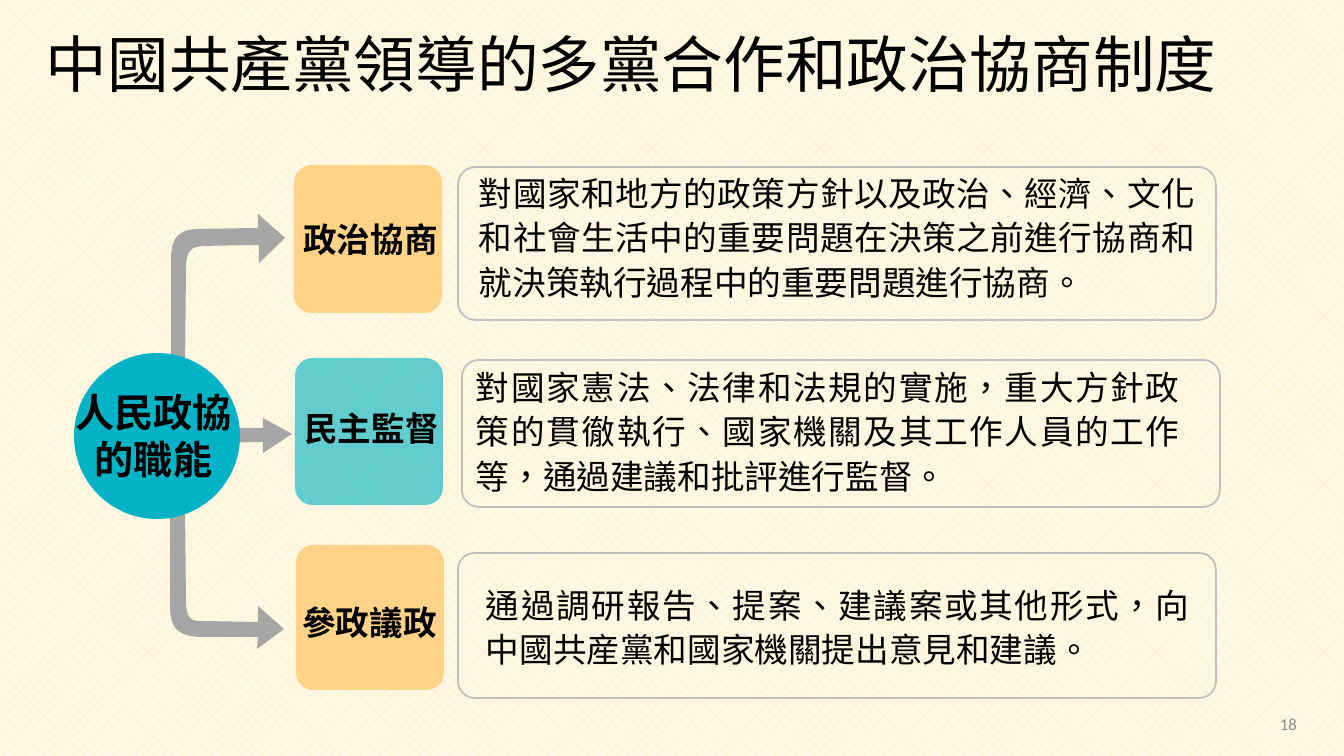
from lxml import etree
from pptx import Presentation
from pptx.dml.color import RGBColor
from pptx.enum.dml import MSO_PATTERN
from pptx.enum.lang import MSO_LANGUAGE_ID
from pptx.enum.shapes import MSO_SHAPE
from pptx.enum.text import MSO_ANCHOR, MSO_AUTO_SIZE, PP_ALIGN
from pptx.oxml.ns import qn
from pptx.util import Pt

RECT, ROUND, OVAL = MSO_SHAPE.RECTANGLE, MSO_SHAPE.ROUNDED_RECTANGLE, MSO_SHAPE.OVAL
LEFT, CENTER, RIGHT, JUSTIFY = PP_ALIGN.LEFT, PP_ALIGN.CENTER, PP_ALIGN.RIGHT, PP_ALIGN.JUSTIFY
TOP, MIDDLE = MSO_ANCHOR.TOP, MSO_ANCHOR.MIDDLE
NO_FIT = MSO_AUTO_SIZE.NONE
DOTS = MSO_PATTERN.PERCENT_30
CHINESE = MSO_LANGUAGE_ID.TRADITIONAL_CHINESE

PX = 914400 / 100.8
COLORS = {"dots": "FFE699", "white": "FFFFFF", "cream": "FFF2CC", "arrow": "A6A6A6",
          "border": "BFBFBF", "orange": "FFBF53", "teal": "01B3C5",
          "text": "000000", "number": "8C8C8C"}

TITLE = "中國共產黨領導的多黨合作和政治協商制度"
ROWS = [
    ("政治協商", "orange", (294, 165, 148, 148), (271, 215, 199, 48),
     (458, 167, 758, 153), (467, 164, 738, 54),
     "對國家和地方的政策方針以及政治、經濟、文化和社會生活中的重要問題"
     "在決策之前進行協商和就決策執行過程中的重要問題進行協商。"),
    ("民主監督", "teal", (295, 358, 148, 147), (272, 404, 199, 48),
     (462, 360, 758, 147), (464, 358, 726, 54),
     "對國家憲法、法律和法規的實施，重大方針政策的貫徹執行、"
     "國家機關及其工作人員的工作等，通過建議和批評進行監督。"),
    ("參政議政", "orange", (296, 545, 148, 145), (270, 598, 199, 48),
     (458, 553, 758, 145), (474, 576, 726, 54),
     "通過調研報告、提案、建議案或其他形式，向中國共産黨和國家機關提出意見和建議。"),
]
ARROWS = [
    [(185, 509), (186, 604), ((187, 621), (193, 621), (203, 621)), (258, 622),
     (258, 606), (284, 629), (257, 649), (258, 637), (200, 637),
     ((178, 636), (171, 628), (170, 609)), (170, 507),
     ((173, 491), (182, 492), (185, 509))],
    [(157, 444), (263, 442), (263, 453), (292, 434), (263, 418), (263, 428), (157, 428)],
    [(185, 376), (186, 266), ((187, 247), (194, 247), (204, 246)), (259, 245),
     (259, 263), (285, 238), (258, 214), (258, 228), (200, 229),
     ((178, 229), (171, 238), (171, 260)), (171, 378),
     ((173, 397), (182, 395), (185, 376))],
]


def emu(*lengths):
    """Turn px lengths into EMU."""
    return [round(n * PX) for n in lengths]


def rgb(name):
    """Return a named colour."""
    return RGBColor.from_string(COLORS[name])


def bezier(start, c1, c2, end, steps=12):
    """Return points along a cubic curve, without its start."""
    ts = [i / steps for i in range(1, steps + 1)]
    return [tuple((1 - t) ** 3 * a + 3 * t * (1 - t) ** 2 * b + 3 * t * t * (1 - t) * c + t ** 3 * d
                  for a, b, c, d in zip(start, c1, c2, end)) for t in ts]


def write(tf, text, size=24, color="text", bold=False, align=LEFT, anchor=TOP,
          spacing=None, margins=(10, 5, 10, 5)):
    """Fill a text frame, one paragraph per line of text."""
    tf.word_wrap, tf.auto_size, tf.vertical_anchor = True, NO_FIT, anchor
    tf.margin_left, tf.margin_top, tf.margin_right, tf.margin_bottom = emu(*margins)
    for i, line in enumerate(text.split("\n")):
        p = tf.add_paragraph() if i else tf.paragraphs[0]
        p.alignment, p.line_spacing = align, spacing
        r = p.add_run()
        r.text = line
        r.font.name, r.font.size, r.font.bold = "Calibri", Pt(size), bold
        r.font.color.rgb = rgb(color)
        r.font.language_id = CHINESE


class Deck:
    """Holds the presentation and draws on its current slide."""

    def __init__(self):
        self.prs = Presentation()
        self.prs.slide_width, self.prs.slide_height = emu(1344, 756)
        self.s = self.prs.slides.add_slide(self.prs.slide_layouts[5])

    def background(self):
        """Lay a cream veil over a dotted pattern, behind the title."""
        fill = self.s.background.fill
        fill.patterned()
        fill.pattern = DOTS
        fill.fore_color.rgb, fill.back_color.rgb = rgb("dots"), rgb("white")
        veil = self.shape(RECT, (0, 0, 1344, 756), fill="cream", alpha=50)
        self.s.shapes.title.element.addprevious(veil.element)

    def title(self, text, box, **fmt):
        """Place and write the title."""
        sp = self.s.shapes.title
        sp.left, sp.top, sp.width, sp.height = emu(*box)
        write(sp.text_frame, text, **fmt)

    def paint(self, sp, fill=None, line=None, alpha=100):
        """Set fill and line of a shape."""
        sp.shadow.inherit = False
        if fill:
            sp.fill.solid()
            sp.fill.fore_color.rgb = rgb(fill)
            if alpha < 100:
                clr = sp.element.spPr.find(qn("a:solidFill"))[0]
                etree.SubElement(clr, qn("a:alpha")).set("val", str(alpha * 1000))
        else:
            sp.fill.background()
        if line:
            sp.line.color.rgb, sp.line.width = rgb(line), Pt(1.25)
        else:
            sp.line.fill.background()

    def shape(self, kind, box, radius=None, **style):
        """Add a preset shape."""
        sp = self.s.shapes.add_shape(kind, *emu(*box))
        if radius:
            sp.adjustments[0] = radius
        self.paint(sp, **style)
        return sp

    def outline(self, steps, fill):
        """Add a closed outline of points and three-point curves."""
        points = [steps[0]]
        for step in steps[1:]:
            points += bezier(points[-1], *step) if len(step) == 3 else [step]
        points = [emu(*point) for point in points]
        builder = self.s.shapes.build_freeform(*points[0])
        builder.add_line_segments(points[1:], close=True)
        self.paint(builder.convert_to_shape(), fill=fill)

    def text(self, text, box, **fmt):
        """Add a text box."""
        write(self.s.shapes.add_textbox(*emu(*box)).text_frame, text, **fmt)


def main():
    """Build the slide and save it."""
    deck = Deck()
    deck.background()
    deck.title(TITLE, (36, 29, 1263, 146), size=44, spacing=0.9)
    for arrow in ARROWS:
        deck.outline(arrow, "arrow")
    for label, color, tile, label_box, frame, body_box, body in ROWS:
        deck.shape(ROUND, frame, radius=0.115, line="border")
        deck.shape(ROUND, tile, radius=0.119, fill=color, alpha=62)
        deck.text(label, label_box, bold=True, align=CENTER, anchor=MIDDLE)
        deck.text(body, body_box, align=JUSTIFY, spacing=1.1, margins=(12, 5, 10, 5))
    deck.shape(OVAL, (74, 353, 166, 166), fill="teal")
    deck.text("人民政協\n的職能", (13, 383, 281, 105), size=28, bold=True, align=CENTER)
    deck.text("18", (1005, 704, 302, 40), size=12, color="number", align=RIGHT, anchor=MIDDLE)
    deck.prs.save("out.pptx")


if __name__ == "__main__":
    main()
